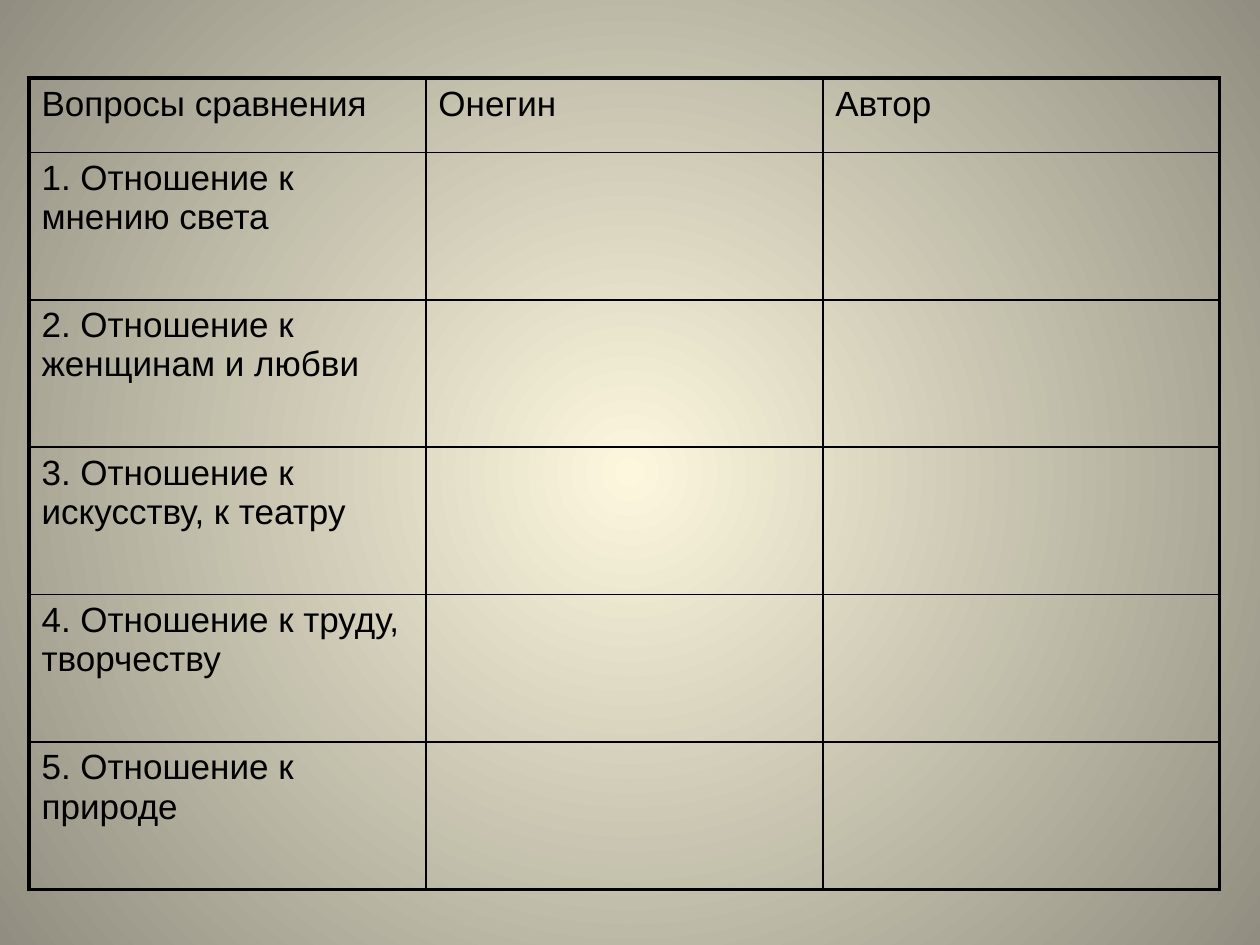
"""Build a slide with an empty comparison table of Onegin and the author."""
import pptx
import pptx.dml.color
import pptx.oxml.ns
import pptx.util
from lxml import etree

Inches = pptx.util.Inches
qn = pptx.oxml.ns.qn


def color(value):
    return pptx.dml.color.RGBColor.from_string(value)


def add_border(cell, side, width):
    line = etree.SubElement(cell._tc.get_or_add_tcPr(), qn(f"a:ln{side}"), w=str(pptx.util.Pt(width)))
    fill = etree.SubElement(line, qn("a:solidFill"))
    etree.SubElement(fill, qn("a:srgbClr"), val="000000")


presentation = pptx.Presentation()
presentation.slide_width = Inches(10)
presentation.slide_height = Inches(7.5)
slide = presentation.slides.add_slide(presentation.slide_layouts[6])

background_fill = slide.background.fill
background_fill.gradient()
for stop, value in zip(background_fill.gradient_stops, ["FCF7DD", "918E81"]):
    stop.color.rgb = color(value)
gradient = slide.element.find(".//" + qn("a:gradFill"))
gradient.remove(gradient.find(qn("a:lin")))
circle = etree.SubElement(gradient, qn("a:path"), path="circle")
etree.SubElement(circle, qn("a:fillToRect"), l="50000", t="50000", r="50000", b="50000")

headings = ["Вопросы сравнения", "Онегин", "Автор"]
questions = [
    "1. Отношение к мнению света",
    "2. Отношение к женщинам и любви",
    "3. Отношение к искусству, к театру",
    "4. Отношение к труду, творчеству",
    "5. Отношение к природе",
]
rows = [headings] + [[question, "", ""] for question in questions]
last_row, last_column = len(rows) - 1, len(headings) - 1

table = slide.shapes.add_table(
    len(rows), len(headings), Inches(0.23), Inches(0.62), Inches(9.45), Inches(6.47)
).table
table.first_row = False
table.horz_banding = False
for column in table.columns:
    column.width = Inches(3.15)

for row_index, texts in enumerate(rows):
    table.rows[row_index].height = Inches(1.17 if row_index else 0.59)
    for column_index, text in enumerate(texts):
        cell = table.cell(row_index, column_index)
        outer_sides = {
            "L": column_index == 0,
            "R": column_index == last_column,
            "T": row_index == 0,
            "B": row_index == last_row,
        }
        for side, is_outer in outer_sides.items():
            add_border(cell, side, 2.25 if is_outer else 1)
        cell.fill.background()
        if text:
            paragraph = cell.text_frame.paragraphs[0]
            paragraph.space_before = pptx.util.Pt(4)
            run = paragraph.add_run()
            run.text = text
            run.font.name = "Arial"
            run.font.size = pptx.util.Pt(20)
            run.font.color.rgb = color("000000")

presentation.save("out.pptx")
